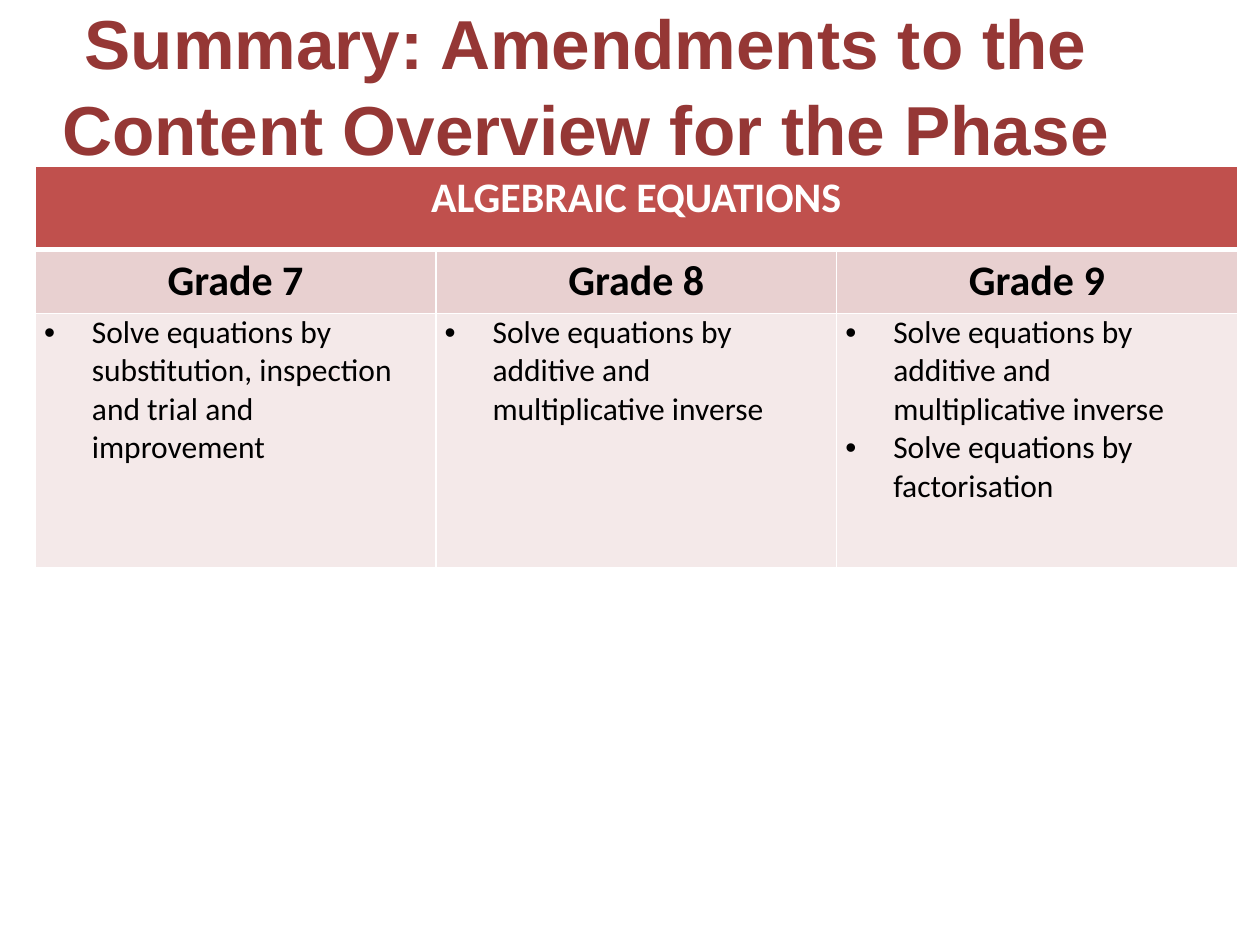
from lxml import etree
from pptx import Presentation
from pptx.dml.color import RGBColor
from pptx.enum.text import MSO_ANCHOR, MSO_AUTO_SIZE, PP_ALIGN
from pptx.oxml.ns import qn
from pptx.util import Inches, Pt

TITLE = "Summary: Amendments to the Content Overview for the Phase"
HEADING = "ALGEBRAIC EQUATIONS"
GRADES = [
    ("Grade 7", ["Solve equations by substitution, inspection and trial and improvement"]),
    ("Grade 8", ["Solve equations by additive and multiplicative inverse"]),
    ("Grade 9", ["Solve equations by additive and multiplicative inverse",
                 "Solve equations by factorisation"]),
]

DARK_RED = RGBColor(0x95, 0x37, 0x35)
RED = RGBColor(0xC0, 0x50, 0x4D)
PINK = RGBColor(0xE8, 0xD0, 0xD0)
PALE_PINK = RGBColor(0xF4, 0xE9, 0xE9)
WHITE = RGBColor(0xFF, 0xFF, 0xFF)
BLACK = RGBColor(0, 0, 0)
CENTER = PP_ALIGN.CENTER
LEFT = PP_ALIGN.LEFT
MIDDLE = MSO_ANCHOR.MIDDLE
NO_AUTOFIT = MSO_AUTO_SIZE.NONE

ROW_HEIGHTS = [0.66, 0.5, 2.02]
COLUMN_WIDTH = 3.18
TABLE_LEFT, TABLE_TOP = 0.28, 1.32
BULLET_INDENT = Inches(0.38)


def format_paragraph(paragraph, font_name, size, color, bold, alignment):
    paragraph.alignment = alignment
    font = paragraph.font
    font.name, font.size, font.bold = font_name, Pt(size), bold
    font.color.rgb = color


def add_bullet(paragraph):
    properties = paragraph._p.get_or_add_pPr()
    properties.set("marL", str(BULLET_INDENT))
    properties.set("indent", str(-BULLET_INDENT))
    bullet_font = etree.Element(qn("a:buFont"), typeface="Arial")
    bullet = etree.Element(qn("a:buChar"), char="•")
    properties.insert(0, bullet_font)
    properties.insert(1, bullet)


def set_borders(cell, bottom_width):
    properties = cell._tc.get_or_add_tcPr()
    widths = {"a:lnL": 1, "a:lnR": 1, "a:lnT": 1, "a:lnB": bottom_width}
    for position, (tag, width) in enumerate(widths.items()):
        line = etree.Element(qn(tag), w=str(Pt(width)))
        fill = etree.SubElement(line, qn("a:solidFill"))
        etree.SubElement(fill, qn("a:srgbClr"), val=str(WHITE))
        properties.insert(position, line)


def fill_cell(cell, lines, fill, size, color, bold, alignment, bottom_width=1):
    cell.text = "\n".join(lines)
    cell.fill.solid()
    cell.fill.fore_color.rgb = fill
    set_borders(cell, bottom_width)
    for paragraph in cell.text_frame.paragraphs:
        format_paragraph(paragraph, "Calibri", size, color, bold, alignment)


def add_title(slide):
    title = slide.shapes.title
    title.left, title.top = Inches(0), Inches(0)
    title.width, title.height = Inches(9.3), Inches(1.32)
    frame = title.text_frame
    frame.text = TITLE
    frame.word_wrap = True
    frame.auto_size = NO_AUTOFIT
    frame.vertical_anchor = MIDDLE
    paragraph = frame.paragraphs[0]
    paragraph.line_spacing = 1.04
    format_paragraph(paragraph, "Arial", 39.6, DARK_RED, True, CENTER)


def add_grade_table(slide):
    table = slide.shapes.add_table(
        len(ROW_HEIGHTS), len(GRADES), Inches(TABLE_LEFT), Inches(TABLE_TOP),
        Inches(COLUMN_WIDTH * len(GRADES)), Inches(sum(ROW_HEIGHTS))).table
    for row, height in zip(table.rows, ROW_HEIGHTS):
        row.height = Inches(height)
    for column in table.columns:
        column.width = Inches(COLUMN_WIDTH)

    heading = table.cell(0, 0)
    heading.merge(table.cell(0, len(GRADES) - 1))
    fill_cell(heading, [HEADING], RED, 24, WHITE, True, CENTER, bottom_width=3)

    for index, (grade, topics) in enumerate(GRADES):
        fill_cell(table.cell(1, index), [grade], PINK, 24, BLACK, True, CENTER)
        cell = table.cell(2, index)
        fill_cell(cell, topics, PALE_PINK, 18, BLACK, False, LEFT)
        cell.margin_left = cell.margin_right = Inches(0.07)
        cell.margin_top = cell.margin_bottom = 0
        for paragraph in cell.text_frame.paragraphs:
            add_bullet(paragraph)


def main():
    presentation = Presentation()
    presentation.slide_width = Inches(10)
    presentation.slide_height = Inches(7.5)
    slide = presentation.slides.add_slide(presentation.slide_layouts[5])
    add_title(slide)
    add_grade_table(slide)
    presentation.save("out.pptx")


if __name__ == "__main__":
    main()
